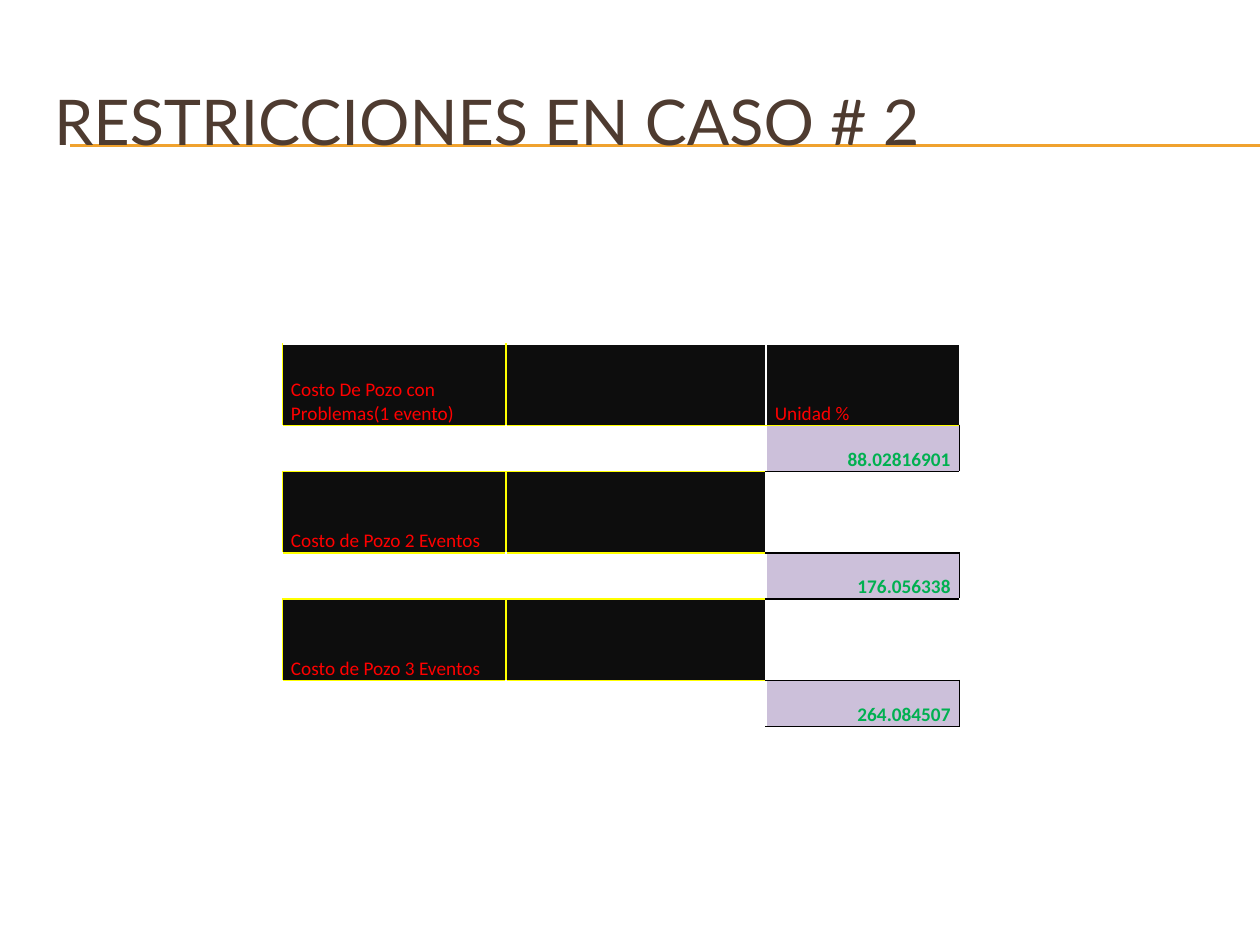
from lxml.etree import SubElement
from pptx import Presentation
from pptx.dml.color import RGBColor
from pptx.enum.shapes import MSO_CONNECTOR
from pptx.enum.text import MSO_ANCHOR, PP_ALIGN
from pptx.oxml.ns import qn
from pptx.util import Pt

COLOURS = {
    "title": "4E3B30", "rule": "F0A22E", "label": "FF0000", "value": "00B050",
    "dark": "0D0D0D", "lilac": "CCC0DA", "yellow": "FFFF00", "black": "000000",
}
COLUMN_WIDTHS = [128, 148.5, 110.5]
ROW_HEIGHTS = [46.5, 26.4]
COSTS = [
    ("Costo De Pozo con Problemas(1 evento)", "88.02816901"),
    ("Costo de Pozo 2 Eventos", "176.056338"),
    ("Costo de Pozo 3 Eventos", "264.084507"),
]


def colour(name):
    return RGBColor.from_string(COLOURS[name])


class SlideBuilder:
    def __init__(self, deck):
        self.page = deck.slides.add_slide(deck.slide_layouts[6])

    def style(self, paragraph, font_name, size, colour_name, bold=False):
        for span in paragraph.runs:
            span.font.name = font_name
            span.font.size = Pt(size)
            span.font.bold = bold
            span.font.color.rgb = colour(colour_name)

    def rule(self, left, right, top):
        line = self.page.shapes.add_connector(
            MSO_CONNECTOR.STRAIGHT, Pt(left), Pt(top), Pt(right), Pt(top))
        line.line.color.rgb = colour("rule")
        line.line.width = Pt(0.75)
        SubElement(line._element.spPr, qn("a:effectLst"))

    def title(self, text, left, top, width, height):
        box = self.page.shapes.add_textbox(Pt(left), Pt(top), Pt(width), Pt(height))
        frame = box.text_frame
        frame.word_wrap = True
        frame.vertical_anchor = MSO_ANCHOR.MIDDLE
        frame.text = text
        self.style(frame.paragraphs[0], "Lato", 36, "title")

    def table(self, left, top, row_count):
        heights = [ROW_HEIGHTS[row % 2] for row in range(row_count)]
        frame = self.page.shapes.add_table(
            row_count, len(COLUMN_WIDTHS), Pt(left), Pt(top),
            Pt(sum(COLUMN_WIDTHS)), Pt(sum(heights)))
        table = frame.table
        table.horz_banding = False
        table.first_row = False
        for column, width in zip(table.columns, COLUMN_WIDTHS):
            column.width = Pt(width)
        for row, height in zip(table.rows, heights):
            row.height = Pt(height)
        return table

    def cell(self, cell, text="", fill=None, borders=None, is_value=False):
        """Fill one cell; borders maps the sides L, R, T, B to colour names."""
        cell.margin_left = cell.margin_right = Pt(5)
        cell.margin_top = cell.margin_bottom = 0
        cell.vertical_anchor = MSO_ANCHOR.BOTTOM
        cell.text_frame.text = text
        paragraph = cell.text_frame.paragraphs[0]
        paragraph.alignment = PP_ALIGN.RIGHT if is_value else PP_ALIGN.LEFT
        self.style(paragraph, "Calibri", 11, "value" if is_value else "label", is_value)
        properties = cell._tc.get_or_add_tcPr()
        for side in "LRTB":
            if borders and side in borders:
                line = SubElement(properties, qn(f"a:ln{side}"), w=str(Pt(1)))
                solid = SubElement(line, qn("a:solidFill"))
                SubElement(solid, qn("a:srgbClr"), val=COLOURS[borders[side]])
        if fill:
            cell.fill.solid()
            cell.fill.fore_color.rgb = colour(fill)
        else:
            cell.fill.background()


def main():
    deck = Presentation()
    deck.slide_width, deck.slide_height = Pt(720), Pt(540)
    builder = SlideBuilder(deck)
    for top in (82.8, 83.5):
        builder.rule(40.3, 720, top)
    builder.title("RESTRICCIONES EN CASO # 2", 23.8, 36, 684, 66)

    table = builder.table(161.3, 196.6, 2 * len(COSTS))
    for index, (label, value) in enumerate(COSTS):
        upper, lower = 2 * index, 2 * index + 1
        first, last = index == 0, index == len(COSTS) - 1

        sides = {"L": "yellow", "R": "yellow", "B": "yellow"}
        if not first:
            sides["T"] = "yellow"
        inner = {side: name for side, name in sides.items() if side != "R"}
        builder.cell(table.cell(upper, 0), label, "dark", sides)
        builder.cell(table.cell(upper, 1), "", "dark", inner)
        if first:
            builder.cell(table.cell(upper, 2), "Unidad %", "dark", {"B": "yellow"})
        else:
            builder.cell(table.cell(upper, 2), borders={"T": "black", "B": "black"})

        gap = {"T": "yellow"} if last else {"T": "yellow", "B": "yellow"}
        for column in (0, 1):
            builder.cell(table.cell(lower, column), borders=gap)
        edges = {"T": "yellow" if first else "black", "R": "black", "B": "black"}
        builder.cell(table.cell(lower, 2), value, "lilac", edges, is_value=True)

    deck.save("out.pptx")


if __name__ == "__main__":
    main()
